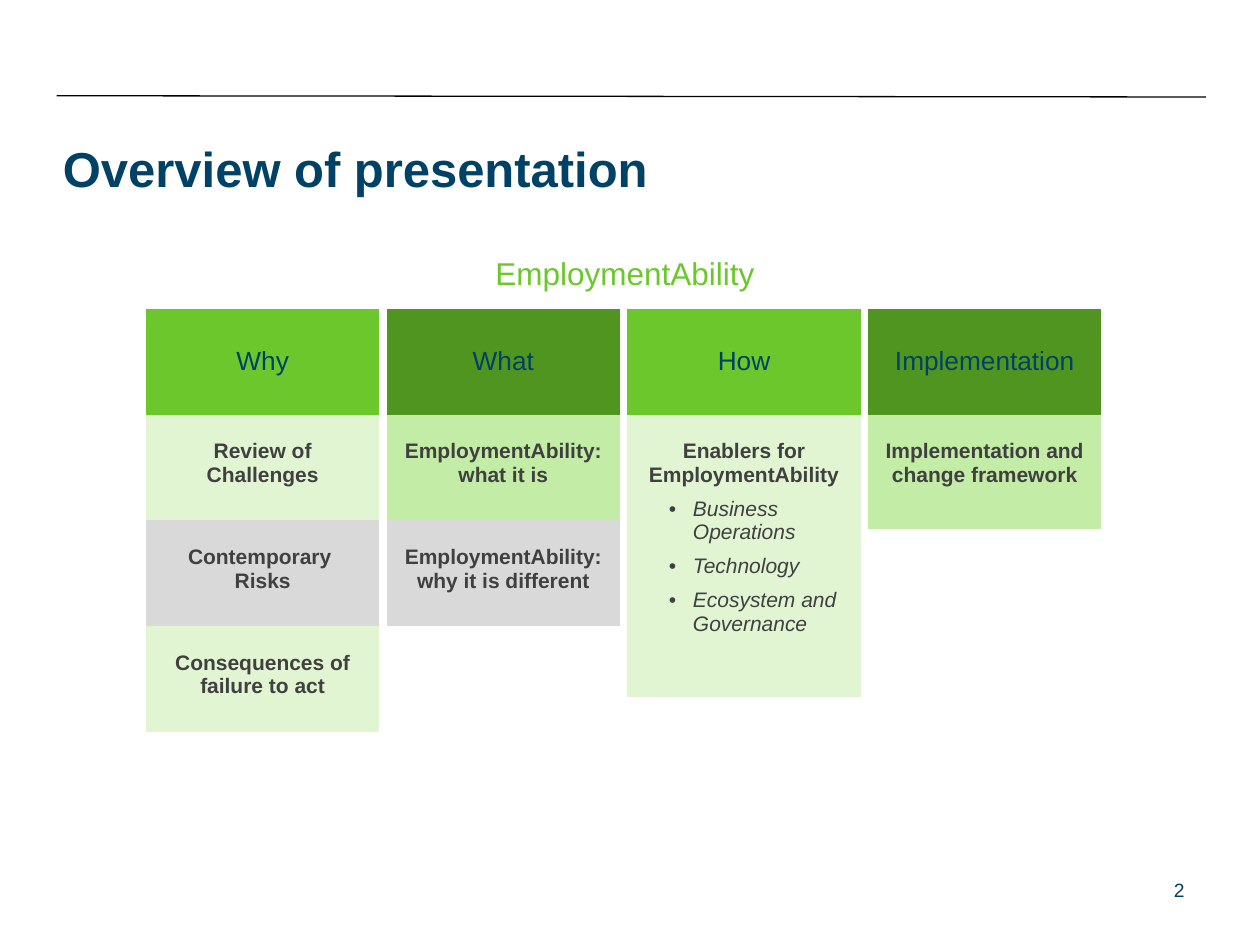
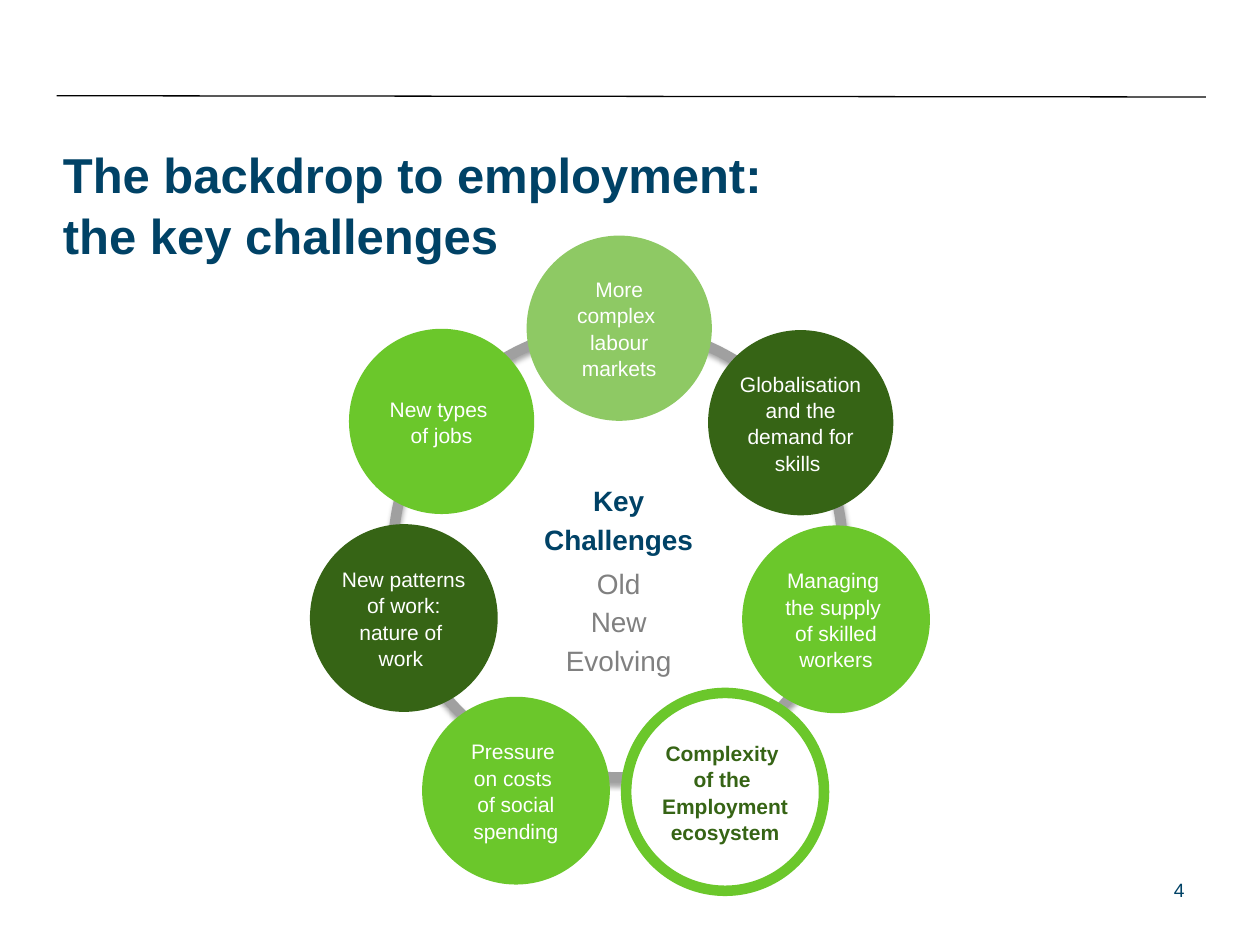
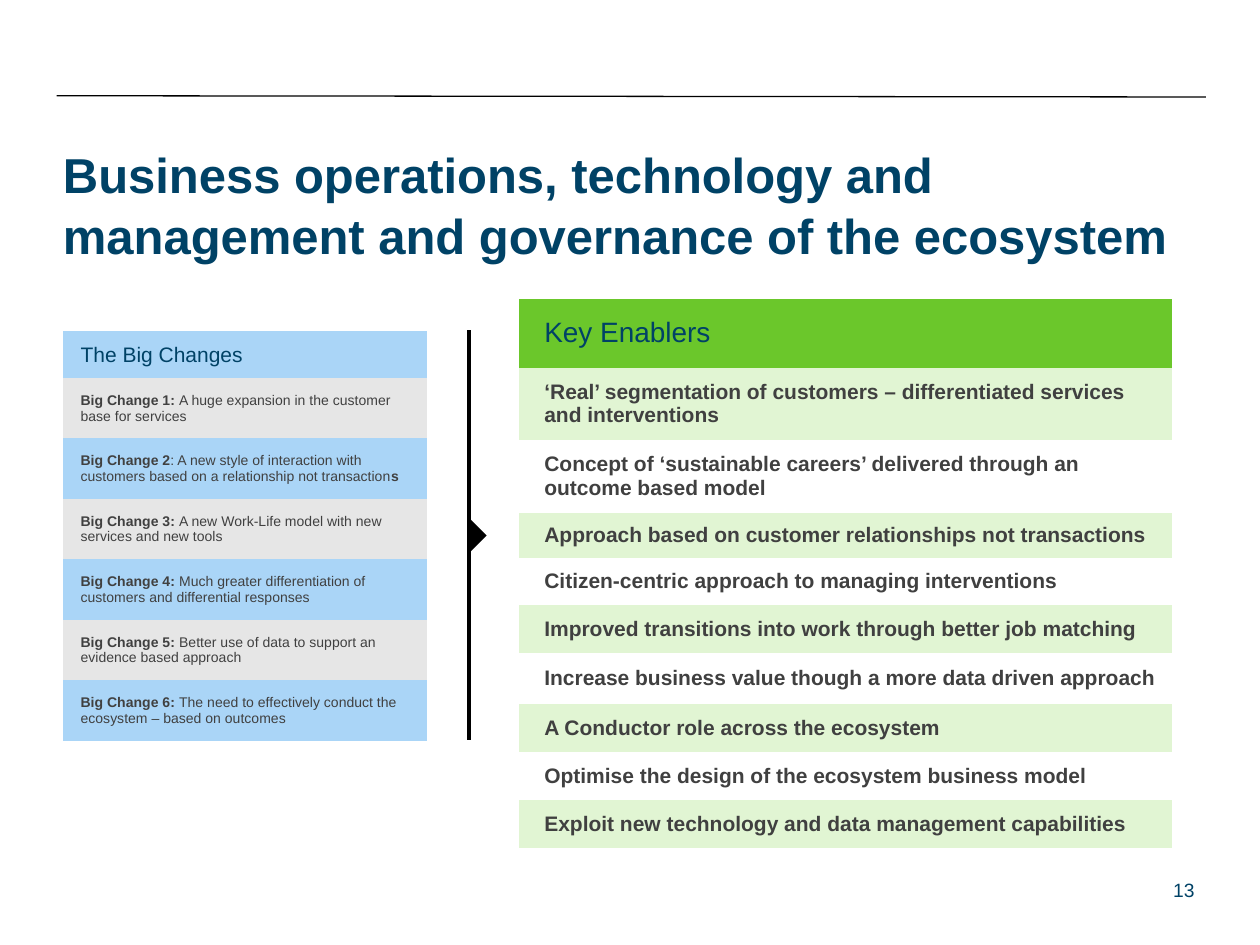
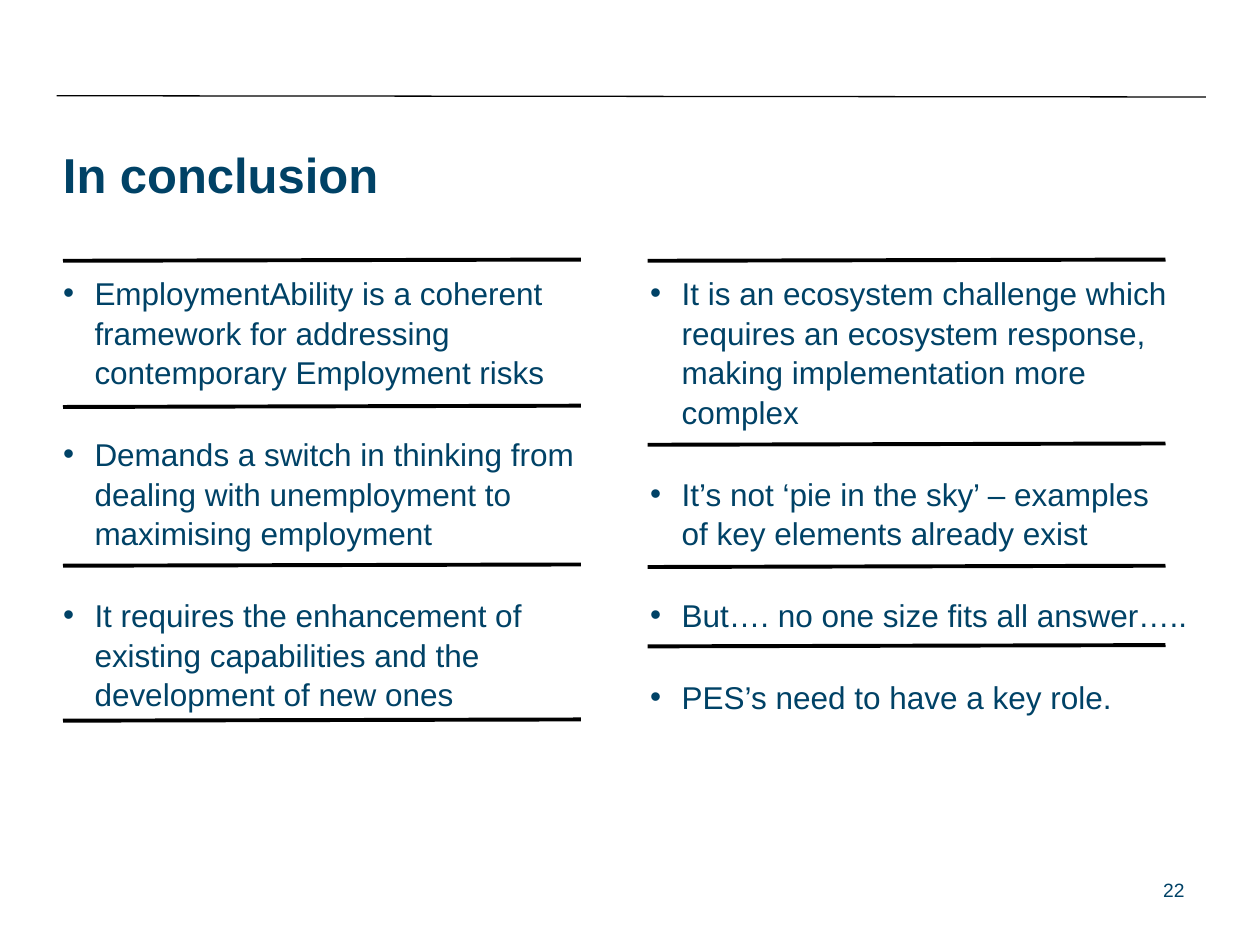
from lxml import etree
from pptx import Presentation
from pptx.dml.color import RGBColor
from pptx.enum import shapes, text
from pptx.oxml.ns import qn
from pptx.util import Inches, Pt

COLORS = {
    "navy": "004266", "black": "000000", "white": "FFFFFF", "body": "404040",
    "muted": "808080", "ring": "A0A0A0", "green": "6BC72B", "mid_green": "509520",
    "dark_green": "366415", "soft_green": "8EC964", "light_green": "C3ECA7",
    "pale_green": "E1F5D3", "grey": "D9D9D9", "pale_grey": "E6E6E6", "blue": "AAD5F7",
}
FONT = "Arial"
PLAIN_TABLE = "{2D5ABB26-0587-4C30-8999-92F81FD0307C}"
LEFT, CENTER, RIGHT = text.PP_ALIGN.LEFT, text.PP_ALIGN.CENTER, text.PP_ALIGN.RIGHT
TOP, MIDDLE = text.MSO_ANCHOR.TOP, text.MSO_ANCHOR.MIDDLE
OVAL = shapes.MSO_SHAPE.OVAL


def color(name):
    return RGBColor.from_string(COLORS[name])


class Deck:
    def __init__(self):
        self.presentation = Presentation()
        self.presentation.slide_width = Inches(10)
        self.presentation.slide_height = Inches(7.5)
        self.slide = None

    def start(self, title, number, title_top=1.12, number_right=9.5):
        self.slide = self.presentation.slides.add_slide(self.presentation.slide_layouts[6])
        self.line(0.45, 0.76, 9.57, 0.77, 0.75)
        self.textbox((0.5, title_top, 9, 0.47), title, 28, bold=True,
                     insets=(0, 0, 0, 0), spacing=1.05)
        self.textbox((number_right - 2.33, 6.92, 2.33, 0.25), str(number), 11, align=RIGHT)

    def style(self, paragraphs, size, ink="navy", bold=False, italic=False):
        for paragraph in paragraphs:
            for run in paragraph.runs:
                font = run.font
                font.name, font.size = FONT, Pt(size)
                font.bold, font.italic = bold, italic
                font.color.rgb = color(ink)
            for line_break in paragraph._p.findall(qn("a:br")):
                etree.SubElement(line_break, qn("a:rPr"), sz=str(size * 100))

    def set_text(self, frame, content, size, ink="navy", bold=False, align=LEFT, spacing=1.0):
        parts = (content,) if isinstance(content, str) else content
        frame.text = parts[0]
        for part in parts[1:]:
            frame.paragraphs[0].add_run().text = part
        self.style(frame.paragraphs, size, ink, bold)
        for paragraph in frame.paragraphs:
            paragraph.alignment = align
            paragraph.line_spacing = spacing
        if len(parts) > 1:
            for index, run in enumerate(frame.paragraphs[0].runs):
                run.font.bold = index % 2 == 0

    def inset(self, target, insets):
        (target.margin_left, target.margin_top,
         target.margin_right, target.margin_bottom) = map(Inches, insets)

    def bullets(self, paragraphs, indent, hanging):
        for paragraph in paragraphs:
            properties = paragraph._p.get_or_add_pPr()
            properties.set("marL", str(Inches(indent)))
            properties.set("indent", str(-Inches(hanging)))
            etree.SubElement(properties, qn("a:buFont"), typeface=FONT)
            etree.SubElement(properties, qn("a:buChar"), char="•")

    def textbox(self, box, content, size, ink="navy", bold=False, align=LEFT,
                insets=(0.1, 0.05, 0.1, 0.05), spacing=1.0):
        frame = self.slide.shapes.add_textbox(*map(Inches, box)).text_frame
        frame.word_wrap = True
        self.inset(frame, insets)
        self.set_text(frame, content, size, ink, bold, align, spacing)
        return frame

    def line(self, x1, y1, x2, y2, width=2.25):
        connector = self.slide.shapes.add_connector(
            shapes.MSO_CONNECTOR.STRAIGHT, *map(Inches, (x1, y1, x2, y2)))
        connector.line.color.rgb = color("black")
        connector.line.width = Pt(width)
        etree.SubElement(connector._element.spPr, qn("a:effectLst"))

    def shape(self, kind, box, fill=None, outline=None, width=6):
        shape = self.slide.shapes.add_shape(kind, *map(Inches, box))
        shape.shadow.inherit = False
        if fill:
            shape.fill.solid()
            shape.fill.fore_color.rgb = color(fill)
        else:
            shape.fill.background()
        if outline:
            shape.line.color.rgb = color(outline)
            shape.line.width = Pt(width)
        else:
            shape.line.fill.background()
        return shape

    def drop_shadow(self, shape):
        effects = shape._element.spPr.find(qn("a:effectLst"))
        shadow = etree.SubElement(effects, qn("a:outerShdw"), blurRad=str(Pt(3.1)),
                                  dist=str(Pt(1.8)), dir="5400000", rotWithShape="0")
        tint = etree.SubElement(shadow, qn("a:srgbClr"), val=COLORS["black"])
        etree.SubElement(tint, qn("a:alpha"), val="35000")

    def circle(self, left, top, size, label, fill, ink="white", bold=False, outline=None):
        frame = self.shape(OVAL, (left, top, size, size), fill, outline).text_frame
        frame.word_wrap = True
        frame.vertical_anchor = MIDDLE
        self.inset(frame, (0, 0.05, 0, 0.05))
        self.set_text(frame, label, 12, ink, bold, CENTER, 1.05)

    def table(self, left, top, width, heights, entries, fills, head_size, body_size,
              head_insets, body_insets, align=LEFT, body_anchor=MIDDLE):
        frame = self.slide.shapes.add_table(
            len(entries), 1, *map(Inches, (left, top, width, sum(heights))))
        table = frame.table
        table.horz_banding = False
        table._tbl.tblPr.find(qn("a:tableStyleId")).text = PLAIN_TABLE
        for index, (height, entry, fill) in enumerate(zip(heights, entries, fills)):
            head = index == 0
            table.rows[index].height = Inches(height)
            cell = table.cell(index, 0)
            cell.fill.solid()
            cell.fill.fore_color.rgb = color(fill)
            cell.vertical_anchor = MIDDLE if head else body_anchor
            self.inset(cell, head_insets if head else body_insets)
            self.set_text(cell.text_frame, entry, head_size if head else body_size,
                          "navy" if head else "body", not head, align)
        return table


def overview(deck):
    deck.start("Overview of presentation", 2, title_top=1.08)
    columns = [
        (["Why", "Review of Challenges", "Contemporary \vRisks",
          "Consequences of failure to act"],
         ["green", "pale_green", "grey", "pale_green"], [0.84] * 4),
        (["What", "EmploymentAbility: what it is", "EmploymentAbility: why it is different"],
         ["mid_green", "light_green", "grey"], [0.84] * 3),
        (["How", "Enablers for EmploymentAbility\nBusiness Operations\nTechnology\n"
                 "Ecosystem and Governance"],
         ["green", "pale_green"], [0.84, 2.24]),
        (["Implementation", "Implementation and change framework"],
         ["mid_green", "light_green"], [0.84, 0.91]),
    ]
    tables = [
        deck.table(1.16 + 1.91 * index, 2.45, 1.85, heights, entries, fills, 15, 12,
                   (0.09, 0.04, 0.09, 0.04), (0.09, 0.2, 0.09, 0.04), CENTER, TOP)
        for index, (entries, fills, heights) in enumerate(columns)
    ]
    enabler_lines = tables[2].cell(1, 0).text_frame.paragraphs
    for paragraph in enabler_lines:
        paragraph.space_after = Pt(6)
    for paragraph in enabler_lines[1:]:
        paragraph.alignment = LEFT
    deck.style(enabler_lines[1:], 12, "body", italic=True)
    deck.bullets(enabler_lines[1:], 0.43, 0.19)
    deck.textbox((2.22, 1.97, 5.48, 0.4), "EmploymentAbility", 18, "green", align=CENTER)


def challenges(deck):
    deck.start("The backdrop to employment: \vthe key challenges", 4)
    ring = deck.shape(OVAL, (3.12, 2.6, 3.57, 3.57), outline="ring")
    deck.drop_shadow(ring)
    centre = deck.textbox((4.12, 3.75, 1.58, 1.62), "Key\nChallenges\nOld\nNew\nEvolving",
                          16, "muted", align=CENTER, spacing=1.15).paragraphs
    deck.style(centre[:2], 16, bold=True)
    centre[1].space_after = Pt(3)
    deck.circle(4.18, 1.87, 1.47, "More complex \nlabour markets", "soft_green")
    deck.circle(5.62, 2.62, 1.47, "Globalisation and the demand for skills ", "dark_green")
    deck.circle(5.89, 4.17, 1.49, "Managing \vthe supply \vof skilled workers", "green")
    deck.circle(4.97, 5.5, 1.57, "Complexity \vof the \nEmployment ecosystem", "white",
                "dark_green", True, "green")
    deck.circle(3.35, 5.53, 1.49, "Pressure \von costs \vof social spending", "green")
    deck.circle(2.46, 4.16, 1.49, "New patterns\vof work: nature of \vwork ", "dark_green")
    deck.circle(2.77, 2.61, 1.47, "New types \vof jobs", "green")


def enablers(deck):
    deck.start("Business operations, technology and management and governance "
               "of the ecosystem", 13, number_right=9.58)
    deck.line(3.72, 5.87, 3.72, 2.62)
    pointer = deck.shape(shapes.MSO_SHAPE.RIGHT_TRIANGLE, (3.62, 4.15, 0.2, 0.2), "black")
    pointer.rotation = 225
    key_enablers = [
        "Key Enablers",
        "‘Real’ segmentation of customers – differentiated services \vand interventions",
        "Concept of ‘sustainable careers’ delivered through an \voutcome based model",
        "Approach based on customer relationships not transactions",
        "Citizen-centric approach to managing interventions",
        "Improved transitions into work through better job matching",
        "Increase business value though a more data driven approach",
        "A Conductor role across the ecosystem",
        "Optimise the design of the ecosystem business model",
        "Exploit new technology and data management capabilities",
    ]
    deck.table(4.12, 2.37, 5.18,
               [0.55, 0.57, 0.58, 0.36, 0.37, 0.38, 0.41, 0.38, 0.38, 0.38],
               key_enablers, ["green"] + ["pale_green", "white"] * 4 + ["pale_green"],
               16, 12, (0.2, 0.05, 0.1, 0.05), (0.2, 0, 0.1, 0))
    big_changes = [
        "The Big Changes",
        ("Big Change 1: ", "A huge expansion in the customer base for services"),
        ("Big Change 2", ": A new style of interaction with customers based on a "
                         "relationship not transaction", "s"),
        ("Big Change 3: ", "A new Work-Life model with new services and new tools"),
        ("Big Change 4: ", "Much greater differentiation of customers and "
                           "differential responses"),
        ("Big Change 5: ", "Better use of data to support an evidence based approach"),
        ("Big Change 6: ", "The need to effectively conduct the ecosystem – "
                           "based on outcomes"),
    ]
    insets = (0.14, 0.04, 0.07, 0.04)
    deck.table(0.5, 2.63, 2.89, [0.37] + [0.48] * 6, big_changes,
               ["blue"] + ["pale_grey", "blue"] * 3, 12, 8, insets, insets)


def conclusion(deck):
    deck.start("In conclusion", 22)
    columns = [
        ((0.5, 2.11, 4.52, 3.25), 0.5, (2.06, 3.22, 4.48, 5.71),
         "EmploymentAbility is a coherent framework for addressing contemporary "
         "Employment risks\n"
         "Demands a switch in thinking from dealing with unemployment to "
         "\vmaximising employment\n"
         "It requires the enhancement of existing capabilities and the development "
         "of new ones"),
        ((5.16, 2.11, 4.41, 4.31), 5.14, (2.06, 3.52, 4.49, 5.12),
         "It is an ecosystem challenge which requires an ecosystem response, "
         "making implementation more complex\n"
         "It’s not ‘pie in the sky’ – examples \vof key elements already exist\n"
         "But…. no one size fits all answer…..\n"
         "PES’s need to have a key role."),
    ]
    for box, rule_left, rule_tops, points in columns:
        frame = deck.textbox(box, points, 18, insets=(0, 0.05, 0, 0.05), spacing=1.05)
        for paragraph in frame.paragraphs:
            paragraph.space_before, paragraph.space_after = Pt(3), Pt(21)
        deck.bullets(frame.paragraphs, 0.25, 0.25)
        for top in rule_tops:
            deck.line(rule_left, top + 0.01, rule_left + 4.11, top)


def main():
    deck = Deck()
    for build in (overview, challenges, enablers, conclusion):
        build(deck)
    deck.presentation.save("out.pptx")


if __name__ == "__main__":
    main()
